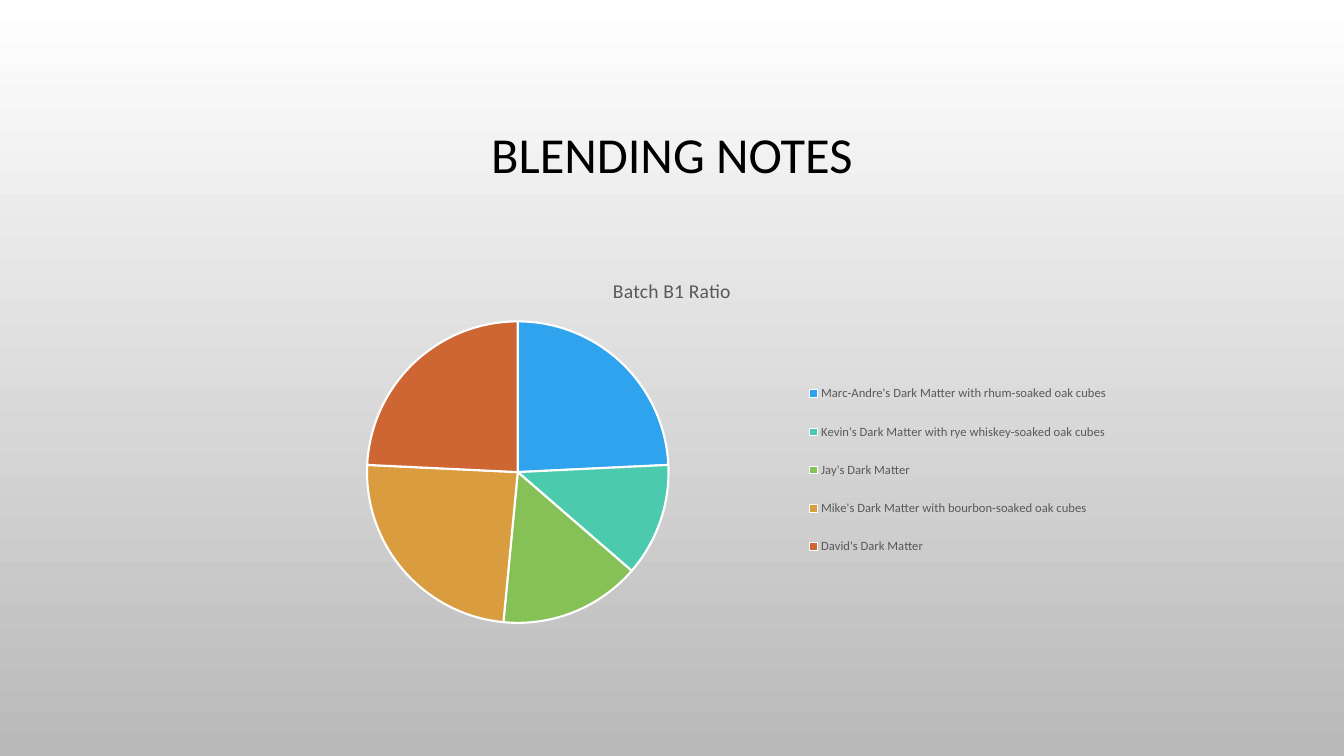
import pptx
import pptx.chart.data
import pptx.dml.color
import pptx.enum.chart
import pptx.enum.text
import pptx.oxml
import pptx.util
from pptx.util import Pt

COLORS = {
    "top": "FFFFFF", "bottom": "B9B9B9", "title": "000000", "label": "595959", "border": "FFFFFF",
}
BLEND = [
    ("Marc-Andre's Dark Matter with rhum-soaked oak cubes", 24, "2FA3EE"),
    ("Kevin's Dark Matter with rye whiskey-soaked oak cubes", 12, "4BCAAD"),
    ("Jay's Dark Matter", 15, "86C157"),
    ("Mike's Dark Matter with bourbon-soaked oak cubes", 24, "D99C3F"),
    ("David's Dark Matter", 24, "CE6633"),
]


def rgb(value):
    return pptx.dml.color.RGBColor.from_string(value)


def apply(target, **values):
    for name, value in values.items():
        setattr(target, name, value)


def place_in_chart(element, before, **fractions):
    """Fix a chart part at x, y, w, h given as fractions of the chart, ahead of the named children."""
    layout = pptx.oxml.parse_xml(
        '<c:layout xmlns:c="http://schemas.openxmlformats.org/drawingml/2006/chart">'
        '<c:manualLayout><c:xMode val="edge"/><c:yMode val="edge"/>'
        + "".join(f'<c:{key} val="{value}"/>' for key, value in fractions.items())
        + "</c:manualLayout></c:layout>"
    )
    for old in element.findall(layout.tag):
        element.remove(old)
    following = next(child for child in element if child.tag.split("}")[1] in before)
    following.addprevious(layout)


class SlideBuilder:
    def __init__(self, slide, font="Calibri"):
        self.slide = slide
        self.font = font

    def style(self, font, size, color):
        apply(font, name=self.font, size=Pt(size), bold=False)
        font.color.rgb = rgb(color)

    def background(self, top, bottom):
        fill = self.slide.background.fill
        fill.gradient()
        fill.gradient_angle = 270
        for stop, color, position in zip(fill.gradient_stops, (top, bottom), (0, 1)):
            stop.color.rgb = rgb(color)
            stop.position = position

    def title(self, text, left, top, width, height):
        sp = self.slide.shapes.title
        apply(sp, left=Pt(left), top=Pt(top), width=Pt(width), height=Pt(height))
        tf = sp.text_frame
        apply(tf, text=text, word_wrap=True, vertical_anchor=pptx.enum.text.MSO_ANCHOR.MIDDLE)
        p = tf.paragraphs[0]
        apply(p, alignment=pptx.enum.text.PP_ALIGN.CENTER, line_spacing=0.9)
        self.style(p.runs[0].font, 36, COLORS["title"])

    def pie(self, title, rows, left, top, width, height):
        data = pptx.chart.data.CategoryChartData()
        data.categories = [name for name, _, _ in rows]
        data.add_series("Series 1", [value for _, value, _ in rows])
        chart = self.slide.shapes.add_chart(
            pptx.enum.chart.XL_CHART_TYPE.PIE, Pt(left), Pt(top), Pt(width), Pt(height), data
        ).chart
        self.style(chart.font, 10, COLORS["title"])

        chart.has_title = True
        chart.chart_title.include_in_layout = False
        tf = chart.chart_title.text_frame
        tf.text = title
        self.style(tf.paragraphs[0].runs[0].font, 14, COLORS["label"])

        chart.has_legend = True
        legend = chart.legend
        apply(legend, position=pptx.enum.chart.XL_LEGEND_POSITION.RIGHT, include_in_layout=False)
        self.style(legend.font, 9, COLORS["label"])

        plot = chart.plots[0]
        plot.vary_by_categories = True
        for i, (_, _, color) in enumerate(rows):
            fmt = plot.series[0].points[i].format
            fmt.fill.solid()
            fmt.fill.fore_color.rgb = rgb(color)
            fmt.line.color.rgb = rgb(COLORS["border"])
            fmt.line.width = Pt(1.5)

        plot_area = chart.element.chart.plotArea
        place_in_chart(plot_area, ("pieChart",), layoutTarget="inner", x=0.23, y=0.16, w=0.27, h=0.8)
        target = plot_area.find(".//{*}layoutTarget")
        target.getparent().insert(0, target)
        place_in_chart(legend._element, ("overlay", "spPr", "txPr"), x=0.61, y=0.27, w=0.28, h=0.57)


def main():
    prs = pptx.Presentation()
    apply(prs, slide_width=Pt(960), slide_height=Pt(540))
    builder = SlideBuilder(prs.slides.add_slide(prs.slide_layouts[5]))
    builder.background(COLORS["top"], COLORS["bottom"])
    builder.title("BLENDING NOTES", 72, 49, 816, 126)
    builder.pie("Batch B1 Ratio", BLEND, 72, 186.5, 816, 269.3)
    prs.save("out.pptx")


if __name__ == "__main__":
    main()
